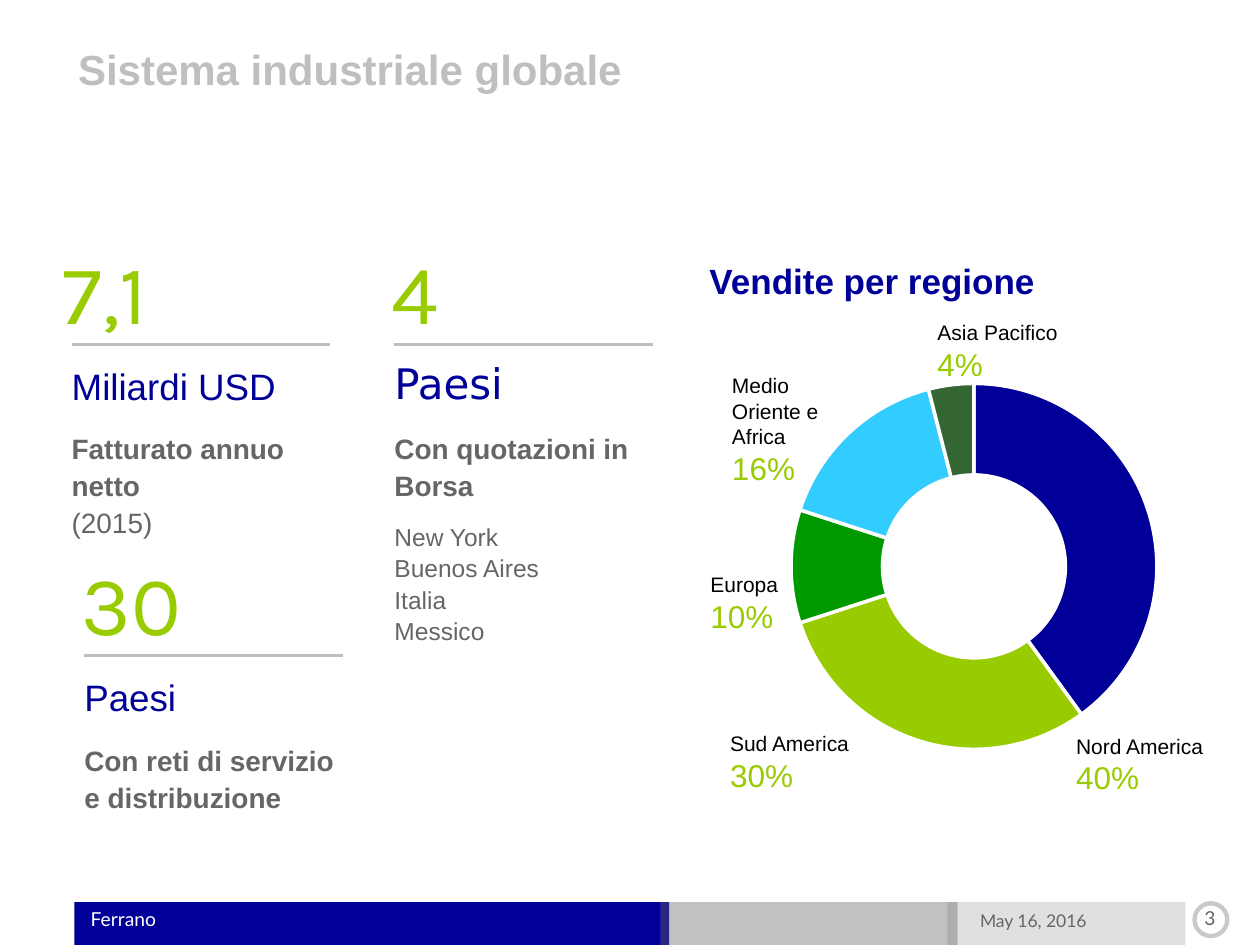
from lxml import etree
from pptx import Presentation
from pptx.chart.data import CategoryChartData
from pptx.dml.color import RGBColor
from pptx.enum.chart import XL_CHART_TYPE
from pptx.enum.shapes import MSO_CONNECTOR, MSO_SHAPE
from pptx.enum.text import MSO_ANCHOR, PP_ALIGN
from pptx.oxml import parse_xml
from pptx.oxml.ns import nsdecls, qn
from pptx.util import Pt

DOUGHNUT = XL_CHART_TYPE.DOUGHNUT
STRAIGHT = MSO_CONNECTOR.STRAIGHT
RECTANGLE, OVAL = MSO_SHAPE.RECTANGLE, MSO_SHAPE.OVAL
TOP, LEFT, CENTER = MSO_ANCHOR.TOP, PP_ALIGN.LEFT, PP_ALIGN.CENTER

NAVY = RGBColor(0x00, 0x00, 0x99)
LIME = RGBColor(0x99, 0xCC, 0x00)
GREEN = RGBColor(0x00, 0x99, 0x00)
SKY = RGBColor(0x33, 0xCC, 0xFF)
FOREST = RGBColor(0x33, 0x66, 0x33)
GRAY = RGBColor(0x66, 0x66, 0x66)
SILVER = RGBColor(0xBF, 0xBF, 0xBF)
BLACK = RGBColor(0x00, 0x00, 0x00)
WHITE = RGBColor(0xFF, 0xFF, 0xFF)

FONTS = {
    "title": ({"name": "Arial", "size": Pt(24), "bold": True}, SILVER),
    "heading": ({"name": "Arial", "size": Pt(20), "bold": True}, NAVY),
    "figure": ({"name": "Karla", "size": Pt(48)}, LIME),
    "unit": ({"name": "Arial", "size": Pt(21)}, NAVY),
    "large unit": ({"name": "DejaVu Sans", "size": Pt(24)}, NAVY),
    "strong": ({"name": "Arial", "size": Pt(16), "bold": True}, GRAY),
    "plain": ({"name": "Arial", "size": Pt(16)}, GRAY),
    "list": ({"name": "Arial", "size": Pt(14)}, GRAY),
    "region": ({"name": "Arial", "size": Pt(12)}, BLACK),
    "share": ({"name": "Arial", "size": Pt(18)}, LIME),
    "footer": ({"name": "Lato", "size": Pt(11)}, WHITE),
    "number": ({"name": "Lato", "size": Pt(11)}, GRAY),
    "date": ({"name": "Lato", "size": Pt(10)}, GRAY),
    "chart": ({"name": "DejaVu Sans", "size": Pt(18)}, BLACK),
}
TIGHT = {"line_spacing": 0.9, "alignment": LEFT}
CENTERED = {"alignment": CENTER}
UNIT = {"line_spacing": Pt(25)}
DETAIL = {"line_spacing": Pt(21), "space_before": Pt(12)}
LIST = {"line_spacing": Pt(18), "space_before": Pt(10)}
FRAME = {"margin_left": 0, "margin_top": 0, "margin_right": 0,
         "margin_bottom": 0, "word_wrap": True, "vertical_anchor": TOP}


def apply(target, values):
    for name, value in values.items():
        setattr(target, name, value)


def points(*lengths):
    return [Pt(length) for length in lengths]


class SlideBuilder:
    def __init__(self, slide):
        self.slide = slide

    def style(self, font, name):
        values, color = FONTS[name]
        apply(font, values)
        font.color.rgb = color

    def fill_frame(self, frame, paragraphs):
        apply(frame, FRAME)
        for index, (layout, lines) in enumerate(paragraphs):
            paragraph = frame.add_paragraph() if index else frame.paragraphs[0]
            apply(paragraph, layout)
            for position, (text, style) in enumerate(lines):
                if position:
                    paragraph.add_line_break()
                run = paragraph.add_run()
                run.text = text
                self.style(run.font, style)

    def title(self, text, box):
        title = self.slide.shapes.title
        apply(title, dict(zip(("left", "top", "width", "height"), points(*box))))
        self.fill_frame(title.text_frame, [(TIGHT, [(text, "title")])])

    def text(self, box, *paragraphs):
        shape = self.slide.shapes.add_textbox(*points(*box))
        self.fill_frame(shape.text_frame, paragraphs)

    def bar(self, box, color, opacity=100):
        shape = self.slide.shapes.add_shape(RECTANGLE, *points(*box))
        shape.shadow.inherit = False
        shape.fill.solid()
        shape.fill.fore_color.rgb = color
        shape.line.fill.background()
        self.fade(shape, opacity)

    def ring(self, box, color, width, opacity):
        shape = self.slide.shapes.add_shape(OVAL, *points(*box))
        shape.shadow.inherit = False
        shape.fill.background()
        shape.line.color.rgb = color
        shape.line.width = Pt(width)
        self.fade(shape, opacity)

    def fade(self, shape, opacity):
        for color in shape.element.spPr.iter(qn("a:srgbClr")):
            etree.SubElement(color, qn("a:alpha")).set("val", str(opacity * 1000))

    def rule(self, left, top, width):
        line = self.slide.shapes.add_connector(
            STRAIGHT, *points(left, top, left + width, top))
        line.line.color.rgb = SILVER
        line.line.width = Pt(1.5)
        etree.SubElement(line.element.spPr, qn("a:effectLst"))

    def fact(self, left, top, figure_left, figure, *details):
        self.text((figure_left, top, 119, 55), ({}, [(figure, "figure")]))
        self.rule(left, top + 59.3, 147.6)
        self.text((left, top + 70.6, 153.4, 102), *details)

    def region(self, box, name, share):
        self.text(box, ({}, [(name, "region")]), ({}, [(share, "share")]))

    def doughnut(self, box, values, colors):
        data = CategoryChartData()
        data.categories = [str(number + 1) for number in range(len(values))]
        data.add_series("Series 1", values)
        chart = self.slide.shapes.add_chart(DOUGHNUT, *points(*box), data).chart
        apply(chart, {"has_legend": False, "has_title": False})
        self.style(chart.font, "chart")
        plot = chart.plots[0]
        apply(plot, {"vary_by_categories": False, "has_data_labels": False})
        for index, color in enumerate(colors):
            segment = plot.series[0].points[index].format
            segment.fill.solid()
            segment.fill.fore_color.rgb = color
            segment.line.color.rgb = WHITE
            segment.line.width = Pt(2)
        area = chart.element.find(".//" + qn("c:plotArea"))
        for layout in area.findall(qn("c:layout")):
            area.remove(layout)
        area.insert(0, parse_xml(
            f'<c:layout {nsdecls("c")}><c:manualLayout>'
            '<c:layoutTarget val="inner"/><c:xMode val="edge"/><c:yMode val="edge"/>'
            '<c:x val="0.2"/><c:y val="0.05"/><c:w val="0.6"/><c:h val="0.9"/>'
            '</c:manualLayout></c:layout>'))


def main():
    presentation = Presentation()
    apply(presentation, {"slide_width": Pt(720), "slide_height": Pt(540)})
    builder = SlideBuilder(
        presentation.slides.add_slide(presentation.slide_layouts[5]))

    builder.bar((42.5, 515.5, 340, 25), NAVY)
    builder.bar((377.3, 515.5, 170, 25), GRAY, 40)
    builder.bar((541.4, 515.5, 136, 25), GRAY, 20)
    builder.text((51.8, 519.8, 320, 12), (TIGHT, [("Ferrano", "footer")]))
    builder.text((676, 517.7, 31, 14), (CENTERED, [("3", "number")]))
    builder.text((560, 521.3, 112, 14), (TIGHT, [("May 16, 2016", "date")]))
    builder.ring((682.6, 516.2, 18.7, 18.7), GRAY, 2.5, 35)

    builder.title("Sistema industriale globale", (44.6, 28, 599, 26.6))

    builder.fact(41, 137.5, 36, "7,1",
                 (UNIT, [("Miliardi USD", "unit")]),
                 (DETAIL, [("Fatturato annuo netto", "strong"),
                           ("(2015)", "plain")]))
    builder.fact(225.4, 137.5, 223.9, "4",
                 (UNIT, [("Paesi", "large unit")]),
                 (DETAIL, [("Con quotazioni in Borsa", "strong")]),
                 (LIST, [(place, "list") for place in
                         ("New York", "Buenos Aires", "Italia", "Messico")]))
    builder.fact(48.2, 315.4, 46.8, "30",
                 (UNIT, [("Paesi", "unit")]),
                 (DETAIL, [("Con reti di servizio e distribuzione", "strong")]))

    builder.text((405.4, 151.2, 187, 22.3),
                 (TIGHT, [("Vendite per regione", "heading")]))
    builder.doughnut((382.3, 207.4, 348.5, 232.6), (40, 30, 10, 16, 4),
                     (NAVY, LIME, GREEN, SKY, FOREST))
    for box, name, share in (
            ((614.9, 419, 88.6, 36), "Nord America", "40%"),
            ((417.2, 417.6, 95.8, 36), "Sud America", "30%"),
            ((406, 326.9, 95.8, 36), "Europa", "10%"),
            ((418.3, 213.1, 60.5, 65.5), "Medio Oriente e Africa", "16%"),
            ((535.7, 182.9, 118.8, 36), "Asia Pacifico", "4%")):
        builder.region(box, name, share)

    presentation.save("out.pptx")


if __name__ == "__main__":
    main()
